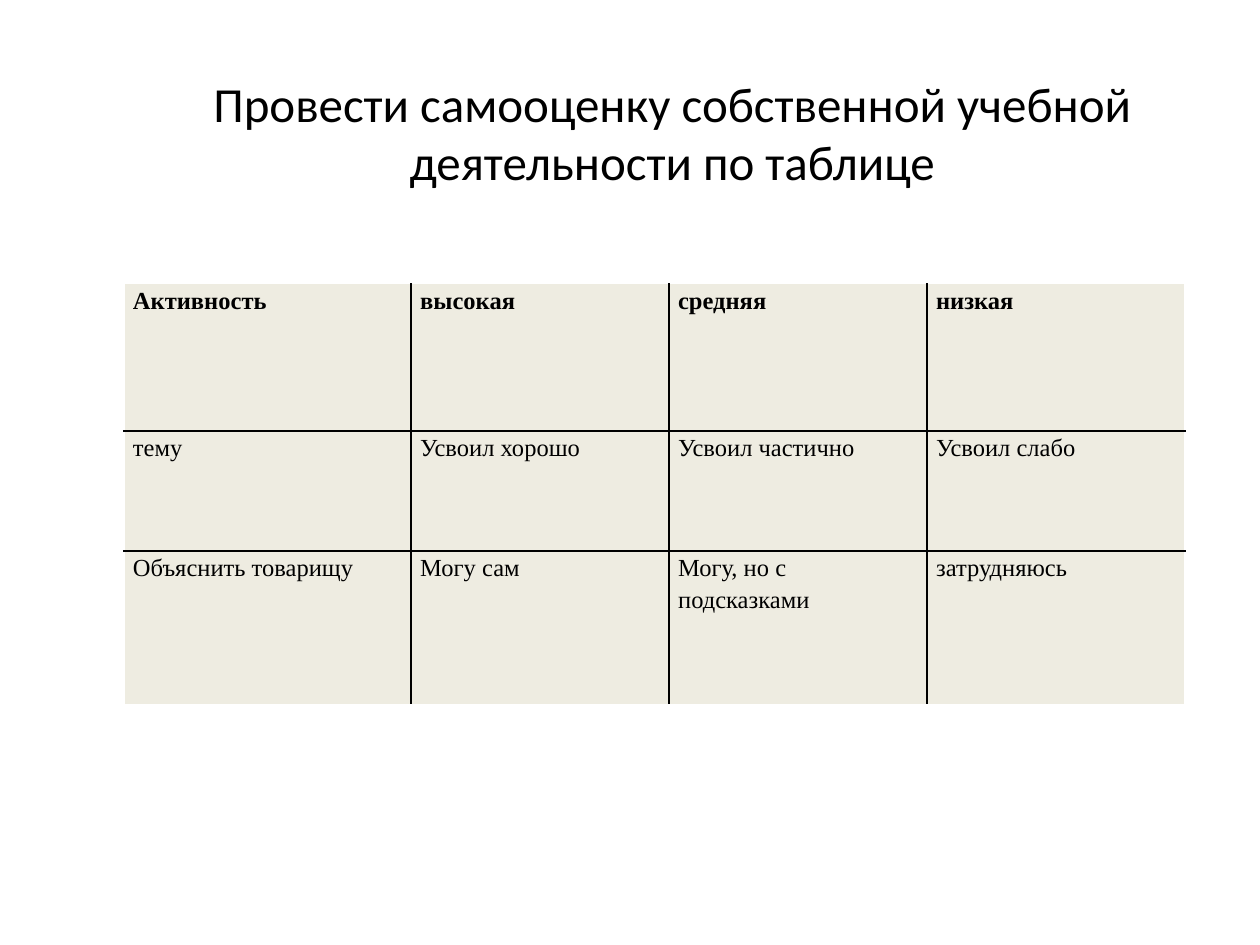
from dataclasses import dataclass

from lxml import etree
from pptx import Presentation
from pptx import util as u
from pptx.dml.color import RGBColor
from pptx.enum import text
from pptx.oxml.ns import qn


@dataclass(frozen=True)
class Theme:
    ink: str = "000000"
    paper: str = "FFFFFF"
    cell: str = "EEECE1"
    title_font: str = "Calibri"
    table_font: str = "Times New Roman"
    title_size: int = 28
    table_size: int = 14
    border: int = 1


@dataclass(frozen=True)
class Box:
    """Position and size in centimetres."""
    x: float
    y: float
    w: float
    h: float

    def lengths(self) -> tuple:
        return tuple(u.Cm(v) for v in (self.x, self.y, self.w, self.h))


THEME = Theme()
TITLE = "Провести самооценку собственной учебной деятельности по таблице"
TITLE_BOX = Box(2.97, 1.07, 21.16, 3.18)
ROWS = (
    ("Активность", "высокая", "средняя", "низкая"),
    ("тему", "Усвоил хорошо", "Усвоил частично", "Усвоил слабо"),
    ("Объяснить товарищу", "Могу сам", "Могу, но с подсказками", "затрудняюсь"),
)
COL_WIDTHS = (5.79, 5.2, 5.2, 5.2)
ROW_HEIGHTS = (2.97, 2.42, 3.09)
TABLE_BOX = Box(2.5, 5.72, sum(COL_WIDTHS), sum(ROW_HEIGHTS))


def style_font(p, name: str, size: int, bold: bool = False) -> None:
    p.font.name = name
    p.font.size = u.Pt(size)
    p.font.bold = bold
    p.font.color.rgb = RGBColor.from_string(THEME.ink)


def add_title(s) -> None:
    sp = s.shapes.title
    sp.left, sp.top, sp.width, sp.height = TITLE_BOX.lengths()
    tf = sp.text_frame
    tf.text = TITLE
    tf.vertical_anchor = text.MSO_ANCHOR.MIDDLE
    p = tf.paragraphs[0]
    p.alignment = text.PP_ALIGN.CENTER
    style_font(p, THEME.title_font, THEME.title_size)


def set_borders(cell, row: int, col: int) -> None:
    """Draw inner edges in ink and outer edges in the paper colour."""
    outer = {
        "a:lnL": col == 0,
        "a:lnR": col == len(COL_WIDTHS) - 1,
        "a:lnT": row == 0,
        "a:lnB": row == len(ROWS) - 1,
    }
    tc_pr = cell._tc.get_or_add_tcPr()
    for tag, is_outer in outer.items():
        ln = etree.SubElement(tc_pr, qn(tag), w=str(u.Pt(THEME.border)))
        fill = etree.SubElement(ln, qn("a:solidFill"))
        etree.SubElement(fill, qn("a:srgbClr"),
                         val=THEME.paper if is_outer else THEME.ink)


def fill_cell(cell, row: int, col: int) -> None:
    set_borders(cell, row, col)
    cell.fill.solid()
    cell.fill.fore_color.rgb = RGBColor.from_string(THEME.cell)
    cell.margin_left = cell.margin_right = u.Cm(0.18)
    cell.margin_top = cell.margin_bottom = 0
    cell.text = ROWS[row][col]
    p = cell.text_frame.paragraphs[0]
    p.line_spacing = 1.15
    p.space_after = u.Pt(10)
    style_font(p, THEME.table_font, THEME.table_size, bold=row == 0)


def add_assessment_table(s) -> None:
    table = s.shapes.add_table(len(ROWS), len(COL_WIDTHS), *TABLE_BOX.lengths()).table
    table.horz_banding = False
    for column, width in zip(table.columns, COL_WIDTHS):
        column.width = u.Cm(width)
    for row, height in enumerate(ROW_HEIGHTS):
        table.rows[row].height = u.Cm(height)
        for col in range(len(COL_WIDTHS)):
            fill_cell(table.cell(row, col), row, col)


def main() -> None:
    prs = Presentation()
    prs.slide_width, prs.slide_height = u.Cm(25.4), u.Cm(19.05)
    s = prs.slides.add_slide(prs.slide_layouts.get_by_name("Title Only"))
    add_title(s)
    add_assessment_table(s)
    prs.save("out.pptx")


if __name__ == "__main__":
    main()
